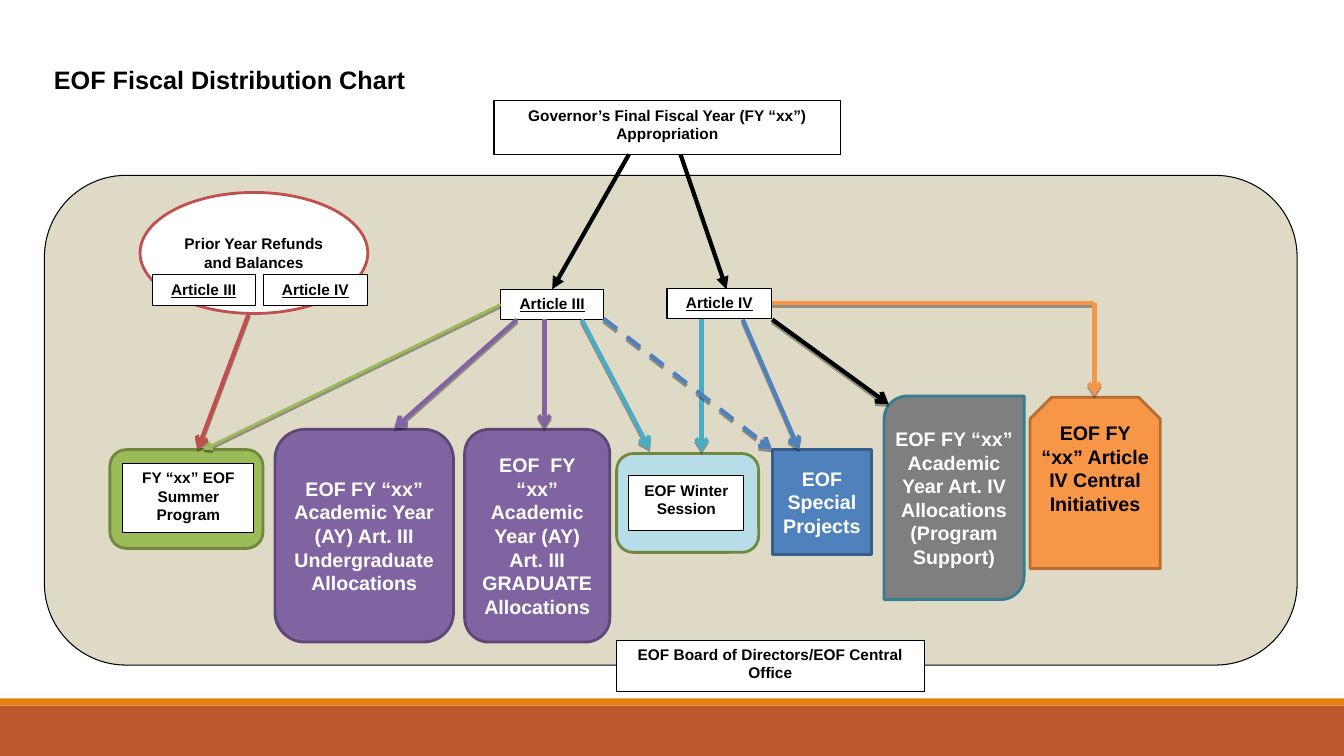
from lxml import etree
from pptx import Presentation
from pptx.dml.color import RGBColor
from pptx.enum import dml, shapes, text
from pptx.oxml import ns
from pptx.util import Cm, Pt

HEX = {
    "white": "FFFFFF", "black": "000000", "rust": "BD582C", "amber": "E48312",
    "sand": "DDD8C2", "red": "C0504D", "green": "9BBB59", "moss": "71893F",
    "purple": "8064A2", "plum": "5C4776", "gray": "7F7F7F", "teal": "357D91",
    "orange": "F79646", "brown": "B66D31", "ice": "B7DEE8", "cyan": "4BACC6",
    "blue": "4F81BD", "navy": "385D8A",
}
FONT = "Arial"
TITLE = ("EOF Fiscal Distribution Chart", (1.16, 1.1, 9.63, 1.8))

AREAS = [
    ("RECTANGLE", (0, 17.78, 33.87, 1.27), "rust", None, 0),
    ("RECTANGLE", (0, 17.6, 33.87, 0.18), "amber", None, 0),
    ("ROUNDED_RECTANGLE", (1.12, 4.42, 31.57, 12.34), "sand", "black", 0.75),
    ("ROUNDED_RECTANGLE", (2.77, 11.33, 3.86, 2.49), "green", "moss", 2),
    ("ROUNDED_RECTANGLE", (15.54, 11.43, 3.58, 2.49), "ice", "moss", 2),
]
PANEL = 2

PROGRAMS = [
    ("OVAL", (3.53, 4.85, 5.74, 3.05), "white", "red", "black", 11,
     "Prior Year Refunds and Balances"),
    ("ROUNDED_RECTANGLE", (6.93, 10.82, 4.5, 5.36), "purple", "plum", "white", 14,
     "EOF FY “xx”\nAcademic Year (AY) Art. III Undergraduate Allocations"),
    ("ROUNDED_RECTANGLE", (11.71, 10.82, 3.66, 5.36), "purple", "plum", "white", 14,
     "EOF  FY “xx” Academic Year (AY) Art. III GRADUATE Allocations"),
    ("ROUND_2_DIAG_RECTANGLE", (22.28, 9.98, 3.53, 5.13), "gray", "teal", "white", 14,
     "EOF FY “xx” Academic Year Art. IV Allocations\n(Program Support)"),
    ("SNIP_2_SAME_RECTANGLE", (25.96, 10.01, 3.28, 4.32), "orange", "brown", "black", 14,
     "EOF FY “xx” Article IV Central Initiatives"),
    ("RECTANGLE", (19.46, 11.33, 2.51, 2.64), "blue", "navy", "white", 14,
     "EOF Special Projects"),
]
SIDE_INSETS = {"ROUND_2_DIAG_RECTANGLE": 0.05, "SNIP_2_SAME_RECTANGLE": 0}

LABELS = {
    "governor": ("Governor’s Final Fiscal Year (FY “xx”) Appropriation", (12.45, 2.54, 8.74, 1.35)),
    "article3": ("Article III", (12.62, 7.29, 2.59, 0.76)),
    "article4": ("Article IV", (16.81, 7.26, 2.64, 0.76)),
    "summer": ("FY “xx” EOF Summer Program", (3.1, 11.68, 3.3, 1.75)),
    "winter": ("EOF Winter Session", (15.85, 11.99, 2.9, 1.37)),
    "refund3": ("Article III", (3.84, 6.93, 2.59, 0.76)),
    "refund4": ("Article IV", (6.63, 6.93, 2.64, 0.76)),
    "board": ("EOF Board of Directors/EOF Central Office", (15.54, 16.13, 7.75, 1.3)),
}

FLOWS = [
    ((6.27, 7.9), (4.98, 11.33), "red", "arrow"),
    ((12.62, 7.67), (5.13, 11.33), "green", "arrow"),
    ((13.03, 8.05), (9.93, 10.8), "purple", "arrow"),
    ((13.72, 8.05), (13.72, 10.8), "purple", "arrow"),
    ((14.66, 8.05), (16.38, 11.33), "cyan", "arrow"),
    ((17.68, 8.05), (17.68, 11.38), "cyan", "arrow"),
    ((18.72, 8.05), (20.14, 11.33), "blue", "arrow"),
    ((19.46, 8.05), (22.4, 10.19), "black", "arrow"),
    ((19.45, 7.64), (27.58, 7.64), "orange", None),
    ((27.58, 7.64), (27.58, 9.98), "orange", "arrow"),
    ((15.21, 8.03), (19.46, 11.33), "blue", "arrow"),
    ((15.85, 3.89), (13.92, 7.29), "black", "triangle"),
    ((17.15, 3.89), (18.31, 7.29), "black", "triangle"),
]
DASHED = 10
STARTS = {1: ("article3", 1), 8: ("article4", 3)}
ENDS = {11: ("article3", 0)}


def rgb(name):
    return RGBColor.from_string(HEX[name])


def add_area(slide, kind, box, fill, line, width):
    sp = slide.shapes.add_shape(getattr(shapes.MSO_SHAPE, kind), *map(Cm, box))
    sp.shadow.inherit = False
    sp.fill.solid()
    sp.fill.fore_color.rgb = rgb(fill)
    if line:
        sp.line.color.rgb = rgb(line)
        sp.line.width = Pt(width)
    else:
        sp.line.fill.background()
    return sp


def write(sp, words, size, color, anchor, side=0.2, align=text.PP_ALIGN.CENTER):
    tf = sp.text_frame
    tf.word_wrap = True
    tf.vertical_anchor = anchor
    tf.margin_left = tf.margin_right = Cm(side)
    tf.text = words
    for p in tf.paragraphs:
        p.alignment = align
        p.font.name = FONT
        p.font.size = Pt(size)
        p.font.bold = True
        p.font.color.rgb = rgb(color)
    return tf


def add_flow(slide, start, end, color, head, dashed):
    cx = slide.shapes.add_connector(shapes.MSO_CONNECTOR.STRAIGHT, *map(Cm, start + end))
    cx.line.color.rgb = rgb(color)
    cx.line.width = Pt(2 if color == "green" else 3)
    if dashed:
        cx.line.dash_style = dml.MSO_LINE.DASH
    sp_pr = cx._element.spPr
    if head:
        etree.SubElement(sp_pr.find(ns.qn("a:ln")), ns.qn("a:tailEnd"), type=head)
    effects = etree.SubElement(sp_pr, ns.qn("a:effectLst"))
    if head != "triangle":
        shadow = etree.SubElement(effects, ns.qn("a:outerShdw"), blurRad="0",
                                  dist=str(Pt(1.8)), dir="5400000", rotWithShape="0")
        tint = etree.SubElement(shadow, ns.qn("a:srgbClr"), val=HEX["black"])
        etree.SubElement(tint, ns.qn("a:alpha"), val="35000")
    return cx


def main():
    prs = Presentation()
    prs.slide_width, prs.slide_height = Cm(33.87), Cm(19.05)
    slide = prs.slides.add_slide(prs.slide_layouts[6])
    top, middle = text.MSO_ANCHOR.TOP, text.MSO_ANCHOR.MIDDLE

    areas = [add_area(slide, *area) for area in AREAS]
    sand = areas[PANEL]._element.spPr.find(ns.qn("a:solidFill"))[0]
    etree.SubElement(sand, ns.qn("a:alpha"), val="93000")

    words, box = TITLE
    title = slide.shapes.add_textbox(*map(Cm, box))
    write(title, words, 18, "black", middle, align=text.PP_ALIGN.LEFT)

    for kind, box, fill, line, color, size, words in PROGRAMS:
        sp = add_area(slide, kind, box, fill, line, 2)
        snipped = kind == "SNIP_2_SAME_RECTANGLE"
        tf = write(sp, words, size, color, top if snipped else middle,
                   SIDE_INSETS.get(kind, 0.2))
        if snipped:
            tf.margin_top = Cm(0.33)

    labels = {}
    for name, (words, box) in LABELS.items():
        sp = labels[name] = add_area(slide, "RECTANGLE", box, "white", "black", 0.75)
        tf = write(sp, words, 11, "black", top)
        if words.startswith("Article"):
            tf.paragraphs[0].font.underline = True

    for i, flow in enumerate(FLOWS):
        cx = add_flow(slide, *flow, i == DASHED)
        if i in STARTS:
            name, side = STARTS[i]
            cx.begin_connect(labels[name], side)
        if i in ENDS:
            name, side = ENDS[i]
            cx.end_connect(labels[name], side)

    prs.save("out.pptx")


if __name__ == "__main__":
    main()
